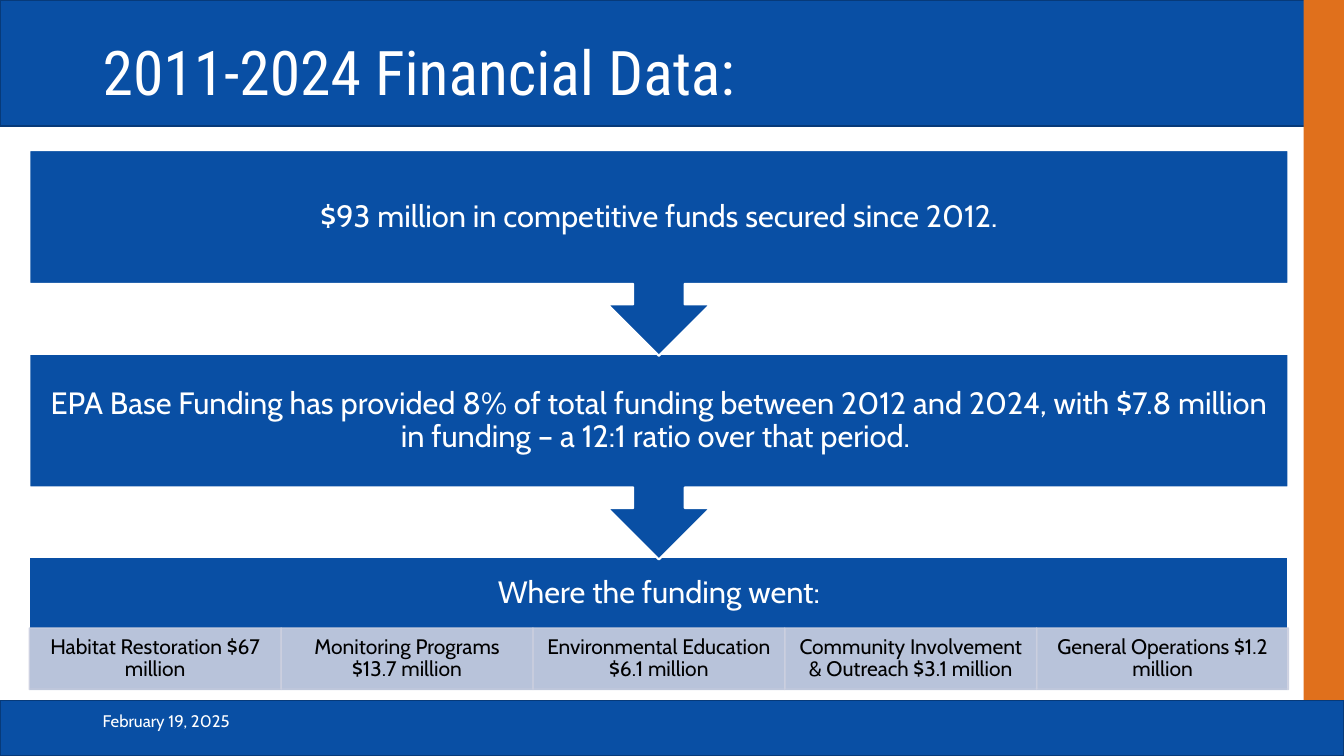
from dataclasses import dataclass

from lxml import etree
from pptx import Presentation
from pptx import util as u
from pptx.dml.color import RGBColor
from pptx.enum import shapes, text
from pptx.oxml import ns

COLORS = {
    "blue": "094FA4",
    "navy": "073A79",
    "orange": "E0701C",
    "mist": "CCD0E0",
    "white": "FFFFFF",
    "black": "000000",
}
BODY_FONT = "Cabin"
HEADING_FONT = "Roboto Condensed"

RECT = shapes.MSO_SHAPE.RECTANGLE
CALLOUT = shapes.MSO_SHAPE.UP_ARROW_CALLOUT


@dataclass(frozen=True)
class Box:
    left: float
    top: float
    width: float
    height: float

    def emu(self):
        return [u.Inches(v) for v in (self.left, self.top, self.width, self.height)]


@dataclass(frozen=True)
class Step:
    message: str
    top: float


SLIDE = Box(0, 0, 13.33, 7.5)
FLOW_LEFT, FLOW_WIDTH = 0.29, 12.49
STEP_HEIGHT, STEP_BODY_HEIGHT = 2.04, 1.33

STEPS = [
    Step("$93 million in competitive funds secured since 2012.", 1.49),
    Step("EPA Base Funding has provided 8% of total funding between 2012 and 2024, "
         "with $7.8 million in funding – a 12:1 ratio over that period. ", 3.51),
]
USES = [
    "Habitat Restoration $67 million",
    "Monitoring Programs $13.7 million",
    "Environmental Education $6.1 million",
    "Community Involvement & Outreach $3.1 million",
    "General Operations $1.2 million",
]


def rgb(name: str) -> RGBColor:
    return RGBColor.from_string(COLORS[name])


def set_opacity(shape, percent: int) -> None:
    """Apply the opacity to both the fill and the outline."""
    for color in shape.element.spPr.iter(ns.qn("a:srgbClr")):
        etree.SubElement(color, ns.qn("a:alpha"), val=str(percent * 1000))


def add_block(slide, box: Box, fill: str, line: str | None = None,
              weight: float = 1, kind=RECT):
    block = slide.shapes.add_shape(kind, *box.emu())
    block.shadow.inherit = False
    block.fill.solid()
    block.fill.fore_color.rgb = rgb(fill)
    if line:
        block.line.color.rgb = rgb(line)
        block.line.width = u.Pt(weight)
    else:
        block.line.fill.background()
    return block


def write(shape, content: str, *, size: float, font: str = BODY_FONT,
          color: str = "white", align=text.PP_ALIGN.CENTER, spacing: float = 0.9,
          inset_x: float = 0.17, inset_y: float = 0.17) -> None:
    frame = shape.text_frame
    frame.word_wrap = True
    frame.vertical_anchor = text.MSO_ANCHOR.MIDDLE
    frame.margin_left = frame.margin_right = u.Inches(inset_x)
    frame.margin_top = frame.margin_bottom = u.Inches(inset_y)
    paragraph = frame.paragraphs[0]
    paragraph.alignment = align
    paragraph.line_spacing = spacing
    run = paragraph.add_run()
    run.text = content
    run.font.size = u.Pt(size)
    run.font.name = font
    run.font.color.rgb = rgb(color)


def add_label(slide, box: Box, content: str, **text_format) -> None:
    write(slide.shapes.add_textbox(*box.emu()), content, **text_format)


def add_page_frame(slide) -> None:
    """Draw the header, side stripe and footer with their text."""
    add_block(slide, Box(0, 0, SLIDE.width, 1.25), "blue", "navy")
    add_block(slide, Box(12.93, 0, 0.4, 7.36), "orange")
    add_block(slide, Box(0, 6.95, SLIDE.width, 0.55), "blue", "navy")
    edge_text = {"align": text.PP_ALIGN.LEFT, "inset_x": 0.1, "inset_y": 0.05}
    add_label(slide, Box(0.92, 0.24, 11.5, 1.01), "2011-2024 Financial Data:",
              size=44, font=HEADING_FONT, **edge_text)
    add_label(slide, Box(0.92, 6.95, 3, 0.4), "February 19, 2025",
              size=12, spacing=1.0, **edge_text)


def add_uses(slide) -> None:
    """Draw the closing block with one equal cell for each use of the funds."""
    top = 5.53
    add_block(slide, Box(FLOW_LEFT, top, FLOW_WIDTH, 1.33), "blue", "white", 1.5)
    add_label(slide, Box(FLOW_LEFT, top, FLOW_WIDTH, 0.72),
              "Where the funding went:", size=22)
    cell_width = FLOW_WIDTH / len(USES)
    for column, use in enumerate(USES):
        cell = add_block(slide, Box(FLOW_LEFT + column * cell_width, 6.23, cell_width, 0.61),
                         "mist", "mist")
        set_opacity(cell, 90)
        write(cell, use, size=15, color="black", inset_x=0.12, inset_y=0.02)


def add_step(slide, step: Step) -> None:
    arrow = add_block(slide, Box(FLOW_LEFT, step.top, FLOW_WIDTH, STEP_HEIGHT),
                      "blue", "white", 1.5, CALLOUT)
    arrow.rotation = 180
    add_label(slide, Box(FLOW_LEFT, step.top, FLOW_WIDTH, STEP_BODY_HEIGHT),
              step.message, size=22)


def main() -> None:
    deck = Presentation()
    deck.slide_width = u.Inches(SLIDE.width)
    deck.slide_height = u.Inches(SLIDE.height)
    slide = deck.slides.add_slide(deck.slide_layouts[6])
    add_page_frame(slide)
    add_uses(slide)
    for step in reversed(STEPS):
        add_step(slide, step)
    deck.save("out.pptx")


if __name__ == "__main__":
    main()
